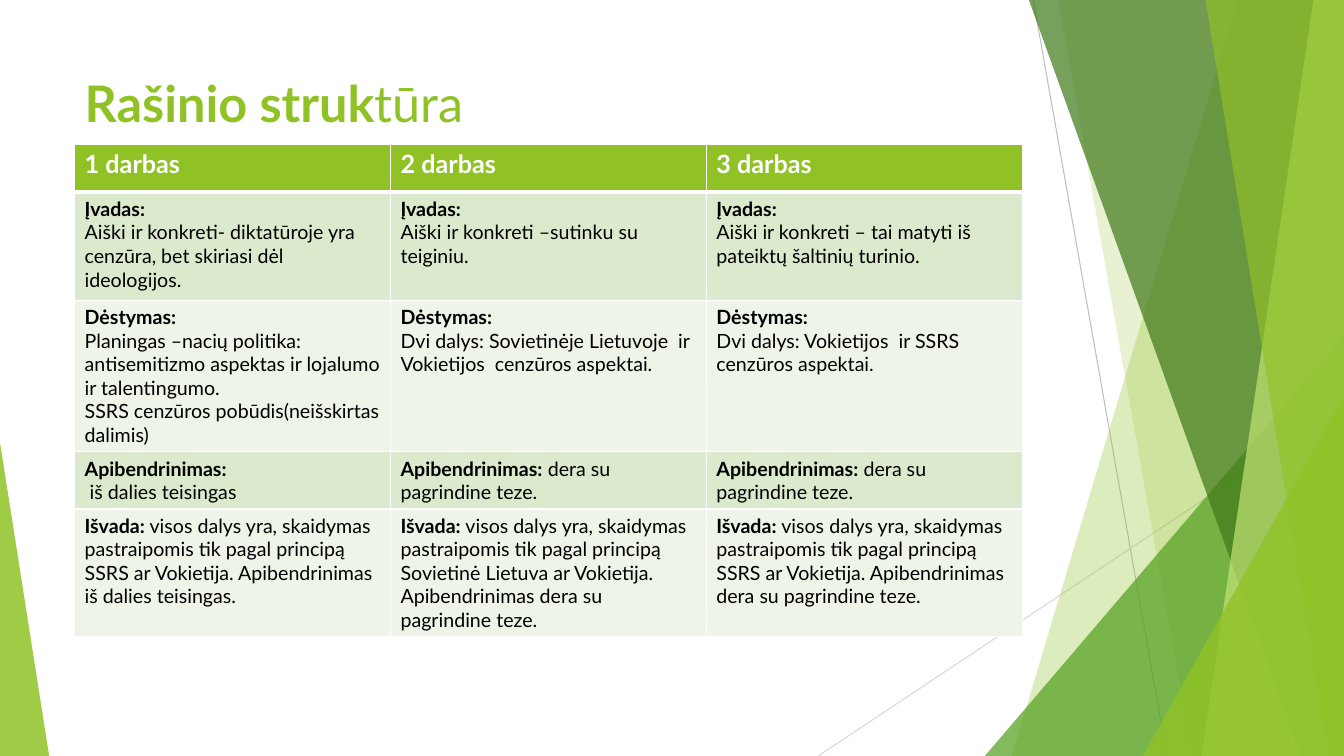
import dataclasses

import lxml.etree
import pptx
import pptx.dml.color
import pptx.enum.shapes
import pptx.enum.text
import pptx.oxml.ns
import pptx.util

Cm = pptx.util.Cm
Pt = pptx.util.Pt
qn = pptx.oxml.ns.qn


@dataclasses.dataclass(frozen=True)
class Theme:
    font: str = "Lato"
    title_size: int = 36
    header_size: int = 18
    body_size: int = 14
    green: str = "90C226"
    leaf: str = "54A021"
    forest: str = "3F7819"
    lime: str = "C0E474"
    white: str = "FFFFFF"
    black: str = "000000"
    odd_row: str = "DBE9CD"
    even_row: str = "EEF4E8"
    dark_line: str = "BFBFBF"
    light_line: str = "D9D9D9"


THEME = Theme()
WIDTH, HEIGHT = 33.87, 19.05
TABLE_LEFT, TABLE_TOP, TABLE_WIDTH = 1.88, 3.63, 23.88
ROW_HEIGHTS = [1.21, 2.73, 3.81, 1.44, 3.21]

HEADERS = ["1 darbas", "2 darbas", "3 darbas"]
# Each row has a bold label and one text per column; a line break starts a paragraph
ROWS = [
    ("Įvadas:", [
        "\nAiški ir konkreti- diktatūroje yra cenzūra, bet skiriasi dėl ideologijos.",
        "\nAiški ir konkreti –sutinku su teiginiu.",
        "\nAiški ir konkreti – tai matyti iš pateiktų šaltinių turinio.",
    ]),
    ("Dėstymas:", [
        "\nPlaningas –nacių politika: antisemitizmo aspektas ir lojalumo ir talentingumo."
        "\nSSRS cenzūros pobūdis(neišskirtas dalimis)",
        "\nDvi dalys: Sovietinėje Lietuvoje  ir Vokietijos  cenzūros aspektai.",
        "\nDvi dalys: Vokietijos  ir SSRS  cenzūros aspektai.",
    ]),
    ("Apibendrinimas:", [
        "\n iš dalies teisingas",
        " dera su pagrindine teze.",
        " dera su pagrindine teze.",
    ]),
    ("Išvada:", [
        f" visos dalys yra, skaidymas pastraipomis tik pagal principą {place} ar Vokietija. "
        f"Apibendrinimas {verdict}."
        for place, verdict in [
            ("SSRS", "iš dalies teisingas"),
            ("Sovietinė Lietuva", "dera su pagrindine teze"),
            ("SSRS", "dera su pagrindine teze"),
        ]
    ]),
]


def rgb(color):
    return pptx.dml.color.RGBColor.from_string(color)


def paint(shape, color, opacity):
    shape.shadow.inherit = False
    shape.line.fill.background()
    shape.fill.solid()
    shape.fill.fore_color.rgb = rgb(color)
    color_node = shape.fill._xPr.find(qn("a:solidFill"))[0]
    lxml.etree.SubElement(color_node, qn("a:alpha"), val=str(opacity * 1000))


def add_band(page, top_left, bottom_left, color, opacity):
    """Full-height band that reaches the right edge of the page."""
    builder = page.shapes.build_freeform(Cm(top_left), Cm(0))
    corners = [(WIDTH, 0), (WIDTH, HEIGHT), (bottom_left, HEIGHT)]
    builder.add_line_segments([(Cm(x), Cm(y)) for x, y in corners], close=True)
    paint(builder.convert_to_shape(), color, opacity)


def add_corner(page, left, top, width, apex, color, opacity):
    """Triangle that stands on the bottom edge of the page."""
    corner = page.shapes.add_shape(
        pptx.enum.shapes.MSO_SHAPE.ISOSCELES_TRIANGLE,
        Cm(left), Cm(top), Cm(width), Cm(HEIGHT - top))
    corner.adjustments[0] = apex
    paint(corner, color, opacity)


def add_hairline(page, start, end, color):
    line = page.shapes.add_connector(
        pptx.enum.shapes.MSO_CONNECTOR.STRAIGHT, *map(Cm, start + end))
    line.line.color.rgb = rgb(color)
    line.line.width = Pt(0.75)
    lxml.etree.SubElement(line.element.spPr, qn("a:effectLst"))


def add_span(para, text, size, color, bold):
    span = para.add_run()
    span.text = text
    span.font.name = THEME.font
    span.font.size = Pt(size)
    span.font.color.rgb = rgb(color)
    span.font.bold = bold


def add_decoration(page):
    add_hairline(page, (26.04, 0), (29.41, HEIGHT), THEME.dark_line)
    add_hairline(page, (WIDTH, 10.24), (20.62, HEIGHT), THEME.light_line)
    add_band(page, 31.19, 25.5, THEME.green, 30)
    add_band(page, 26.67, 30.05, THEME.green, 20)
    add_corner(page, 24.82, 8.46, 9.05, 1, THEME.leaf, 72)
    add_band(page, 25.93, 32.79, THEME.forest, 70)
    add_band(page, 33.1, 30.28, THEME.lime, 70)
    add_band(page, 30.38, 33.48, THEME.green, 65)
    add_corner(page, 28.8, 9.98, 5.07, 1, THEME.green, 80)
    add_corner(page, 0, 11.15, 1.24, 0, THEME.green, 85)


def add_title(page):
    title = page.shapes.title
    title.left, title.top = Cm(TABLE_LEFT), Cm(1.7)
    title.width, title.height = Cm(TABLE_WIDTH), Cm(3.66)
    title.text_frame.vertical_anchor = pptx.enum.text.MSO_ANCHOR.TOP
    para = title.text_frame.paragraphs[0]
    para.alignment = pptx.enum.text.PP_ALIGN.LEFT
    add_span(para, "Rašinio struk", THEME.title_size, THEME.green, True)
    add_span(para, "tūra", THEME.title_size, THEME.green, False)
    # Bring the title in front of the decoration
    title.element.getparent().append(title.element)


def add_border(cell, side, width):
    border = lxml.etree.SubElement(
        cell._tc.get_or_add_tcPr(), qn("a:ln" + side), w=str(Pt(width)))
    fill = lxml.etree.SubElement(border, qn("a:solidFill"))
    lxml.etree.SubElement(fill, qn("a:srgbClr"), val=THEME.white)


def fill_cell(cell, label, body, size, color, background, top=1, bottom=1):
    for side, width in (("L", 1), ("R", 1), ("T", top), ("B", bottom)):
        add_border(cell, side, width)
    cell.fill.solid()
    cell.fill.fore_color.rgb = rgb(background)
    first, *others = body.split("\n")
    para = cell.text_frame.paragraphs[0]
    add_span(para, label, size, color, True)
    if first:
        add_span(para, first, size, color, False)
    for line in others:
        add_span(cell.text_frame.add_paragraph(), line, size, color, False)


def add_essay_table(page):
    table = page.shapes.add_table(
        len(ROW_HEIGHTS), len(HEADERS), Cm(TABLE_LEFT), Cm(TABLE_TOP),
        Cm(TABLE_WIDTH), Cm(sum(ROW_HEIGHTS))).table
    for row, height in zip(table.rows, ROW_HEIGHTS):
        row.height = Cm(height)
    for column, header in enumerate(HEADERS):
        fill_cell(table.cell(0, column), header, "", THEME.header_size,
                  THEME.white, THEME.green, bottom=3)
    for number, (label, bodies) in enumerate(ROWS, start=1):
        background = THEME.odd_row if number % 2 else THEME.even_row
        for column, body in enumerate(bodies):
            fill_cell(table.cell(number, column), label, body, THEME.body_size,
                      THEME.black, background, top=3 if number == 1 else 1)


def main():
    deck = pptx.Presentation()
    deck.slide_width, deck.slide_height = Cm(WIDTH), Cm(HEIGHT)
    page = deck.slides.add_slide(deck.slide_layouts.get_by_name("Title Only"))
    add_decoration(page)
    add_title(page)
    add_essay_table(page)
    deck.save("out.pptx")


if __name__ == "__main__":
    main()
